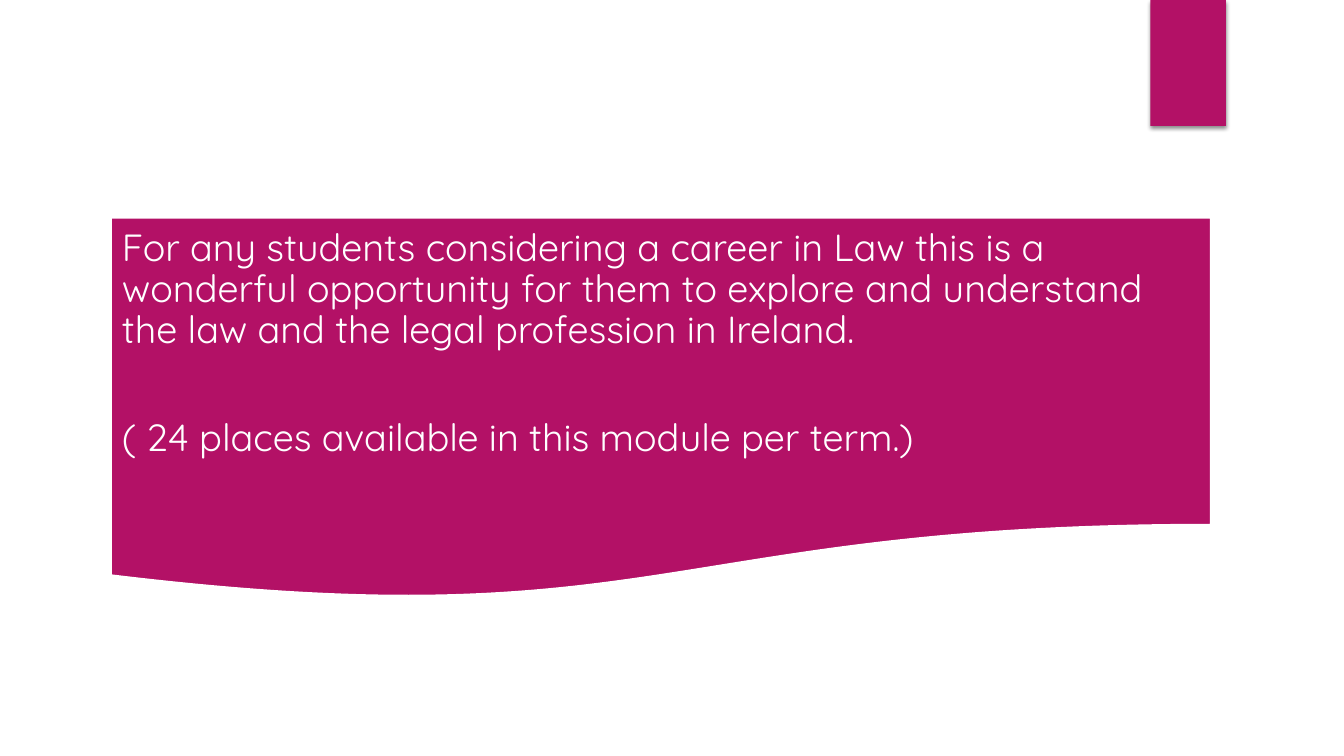
from lxml import etree
from pptx import Presentation
from pptx.dml.color import RGBColor
from pptx.enum.shapes import MSO_SHAPE
from pptx.enum.text import MSO_ANCHOR, PP_ALIGN
from pptx.oxml import parse_xml
from pptx.oxml.ns import nsdecls, qn
from pptx.util import Inches, Pt

RECTANGLE = MSO_SHAPE.RECTANGLE
DOCUMENT = MSO_SHAPE.FLOWCHART_DOCUMENT
TOP = MSO_ANCHOR.TOP
LEFT = PP_ALIGN.LEFT

COLOURS = {"magenta": "B31166", "white": "FFFFFF", "shadow": "000000"}
FONT = "Quicksand"
PARAGRAPHS = [
    "For any students considering a career in Law this is a wonderful "
    "opportunity for them to explore and understand the law and the legal "
    "profession in Ireland.",
    "( 24 places available in this module per term.)",
]


def colour(name):
    return RGBColor.from_string(COLOURS[name])


def add_filled_shape(slide, kind, left, top, width, height):
    shape = slide.shapes.add_shape(
        kind, Inches(left), Inches(top), Inches(width), Inches(height))
    shape.shadow.inherit = False
    shape.fill.solid()
    shape.fill.fore_color.rgb = colour("magenta")
    return shape


def add_corner_tab(slide, left, top, width, height):
    tab = add_filled_shape(slide, RECTANGLE, left, top, width, height)
    tab.line.fill.background()
    # Soft shadow below the tab
    effects = tab._element.spPr.find(qn("a:effectLst"))
    effects.append(parse_xml(
        f'<a:outerShdw {nsdecls("a")} blurRad="{Pt(3)}" dist="{Pt(2)}" '
        f'dir="5400000" rotWithShape="0"><a:srgbClr val="{COLOURS["shadow"]}">'
        '<a:alpha val="45000"/></a:srgbClr></a:outerShdw>'))


def add_message_panel(slide, left, top, width, height):
    # Panel with a wavy lower edge
    panel = add_filled_shape(slide, DOCUMENT, left, top, width, height)
    panel.line.color.rgb = colour("white")
    panel.line.width = Pt(1.5)

    # Message above the wave
    message = slide.shapes.add_textbox(
        Inches(left), Inches(top), Inches(width), Inches(height * 0.8))
    text_frame = message.text_frame
    text_frame.word_wrap = True
    text_frame.vertical_anchor = TOP
    text_frame.margin_left = text_frame.margin_right = Inches(0.11)
    text_frame.margin_top = text_frame.margin_bottom = Inches(0.11)
    text_frame.text = "\n".join(PARAGRAPHS)
    for paragraph in text_frame.paragraphs:
        paragraph.alignment = LEFT
        paragraph.line_spacing = 0.9
        paragraph.space_after = Pt(48)
        for run in paragraph.runs:
            run.font.name = FONT
            run.font.size = Pt(27)
            run.font.color.rgb = colour("white")


def main():
    presentation = Presentation()
    presentation.slide_width = Inches(13.33)
    presentation.slide_height = Inches(7.5)
    slide = presentation.slides.add_slide(presentation.slide_layouts[6])
    slide.background.fill.solid()
    slide.background.fill.fore_color.rgb = colour("white")
    add_corner_tab(slide, 11.41, 0, 0.75, 1.25)
    add_message_panel(slide, 1.1, 2.16, 10.91, 3.8)
    presentation.save("out.pptx")


if __name__ == "__main__":
    main()
